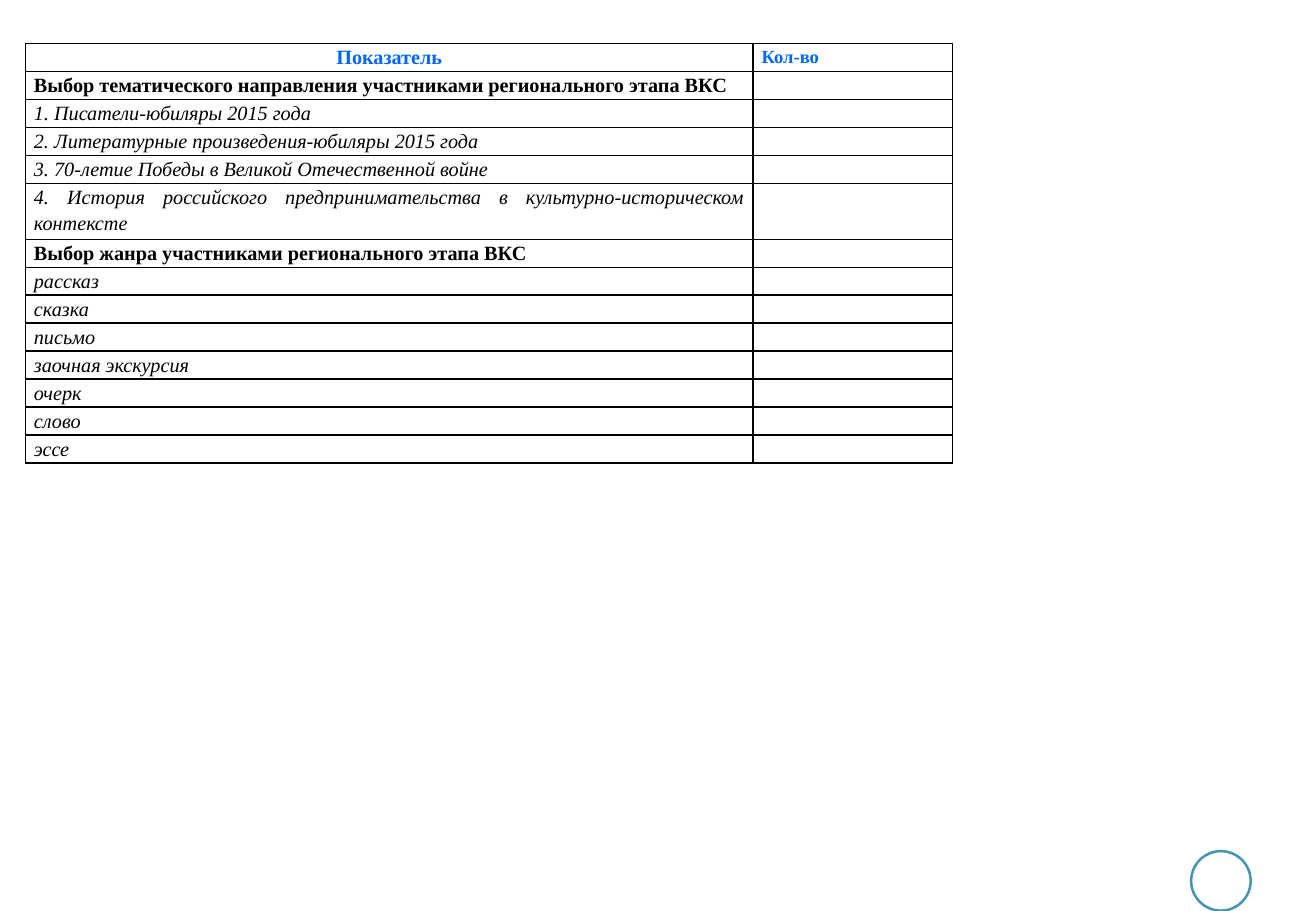
"""Build a slide with a table of contest indicators."""
from lxml.etree import SubElement
from pptx import Presentation
from pptx.dml.color import RGBColor
from pptx.enum.shapes import MSO_SHAPE
from pptx.enum.text import PP_ALIGN
from pptx.oxml.ns import qn
from pptx.util import Pt

COLORS = {"text": "000000", "header": "0066FF", "white": "FFFFFF", "ring": "4696B1"}
FONT_NAME = "Times New Roman"
ROW_HEIGHT = 16.6
COLUMN_WIDTHS = (431.3, 118.1)
MARGINS = {"margin_left": Pt(5), "margin_right": Pt(5), "margin_top": 0, "margin_bottom": 0}

HEADER = {"size": Pt(12), "bold": True, "italic": False, "color": "header"}
SMALL_HEADER = {**HEADER, "size": Pt(11)}
SECTION = {**HEADER, "color": "text"}
ITEM = {**SECTION, "bold": False, "italic": True}

ROWS = [
    ("Выбор тематического направления участниками регионального этапа ВКС", SECTION, PP_ALIGN.LEFT),
    ("1. Писатели-юбиляры 2015 года", ITEM, PP_ALIGN.JUSTIFY),
    ("2. Литературные произведения-юбиляры 2015 года", ITEM, PP_ALIGN.JUSTIFY),
    ("3. 70-летие Победы в Великой Отечественной войне", ITEM, PP_ALIGN.JUSTIFY),
    ("4. История российского предпринимательства в культурно-историческом контексте",
     ITEM, PP_ALIGN.JUSTIFY),
    ("Выбор жанра участниками регионального этапа ВКС", SECTION, PP_ALIGN.JUSTIFY),
    ("рассказ", ITEM, PP_ALIGN.JUSTIFY),
    ("сказка", ITEM, PP_ALIGN.JUSTIFY),
    ("письмо", ITEM, PP_ALIGN.JUSTIFY),
    ("заочная экскурсия", ITEM, PP_ALIGN.JUSTIFY),
    ("очерк", ITEM, PP_ALIGN.JUSTIFY),
    ("слово", ITEM, PP_ALIGN.JUSTIFY),
    ("эссе", ITEM, PP_ALIGN.JUSTIFY),
]
WRAPPED_ROW = 5


def set_attributes(target, values):
    """Set each named attribute of the target."""
    for name, value in values.items():
        setattr(target, name, value)


def color(name):
    """Return a named colour."""
    return RGBColor.from_string(COLORS[name])


def add_borders(cell):
    """Draw a thin black line on every side of a cell."""
    properties = cell._tc.get_or_add_tcPr()
    for position, side in enumerate(("lnL", "lnR", "lnT", "lnB")):
        line = properties.makeelement(qn(f"a:{side}"), {"w": str(Pt(1))})
        fill = SubElement(line, qn("a:solidFill"))
        SubElement(fill, qn("a:srgbClr"), val=COLORS["text"])
        properties.insert(position, line)


def format_cell(cell):
    """Give a cell its margins, empty fill and borders."""
    set_attributes(cell, MARGINS)
    cell.fill.background()
    add_borders(cell)


def write_cell(cell, text, style, alignment):
    """Write styled text into a cell."""
    paragraph = cell.text_frame.paragraphs[0]
    set_attributes(paragraph, {"alignment": alignment, "line_spacing": 1.15})
    run = paragraph.add_run()
    run.text = text
    font_values = {key: value for key, value in style.items() if key != "color"}
    set_attributes(run.font, {"name": FONT_NAME, **font_values})
    run.font.color.rgb = color(style["color"])


def shrink_empty_cell(cell):
    """Keep an empty cell from stretching its row."""
    SubElement(cell.text_frame.paragraphs[0]._p, qn("a:endParaRPr"), sz="1100")


def add_indicator_table(slide):
    """Add the table of indicators and their counts."""
    row_count = len(ROWS) + 1
    frame = slide.shapes.add_table(row_count, len(COLUMN_WIDTHS), Pt(15.1), Pt(25.7),
                                   Pt(sum(COLUMN_WIDTHS)), Pt(ROW_HEIGHT * (row_count + 1)))
    table = frame.table
    set_attributes(table, {"first_row": False, "horz_banding": False})
    for column, width in zip(table.columns, COLUMN_WIDTHS):
        column.width = Pt(width)
    for index, row in enumerate(table.rows):
        row.height = Pt(ROW_HEIGHT * (2 if index == WRAPPED_ROW else 1))
    for cell in table.iter_cells():
        format_cell(cell)
    write_cell(table.cell(0, 0), "Показатель", HEADER, PP_ALIGN.CENTER)
    write_cell(table.cell(0, 1), "Кол-во", SMALL_HEADER, PP_ALIGN.LEFT)
    for index, (text, style, alignment) in enumerate(ROWS, start=1):
        write_cell(table.cell(index, 0), text, style, alignment)
        shrink_empty_cell(table.cell(index, 1))


def add_ring(slide):
    """Add the outlined circle in the lower right corner."""
    shape = slide.shapes.add_shape(MSO_SHAPE.OVAL, Pt(706), Pt(504.5), Pt(35.3), Pt(35.3))
    shape.shadow.inherit = False
    shape.fill.solid()
    shape.fill.fore_color.rgb = color("white")
    shape.line.color.rgb = color("ring")
    shape.line.width = Pt(1.5)


def main():
    """Create and save the presentation."""
    presentation = Presentation()
    set_attributes(presentation, {"slide_width": Pt(780), "slide_height": Pt(540)})
    slide = presentation.slides.add_slide(presentation.slide_layouts[6])
    add_ring(slide)
    add_indicator_table(slide)
    presentation.save("out.pptx")


if __name__ == "__main__":
    main()
